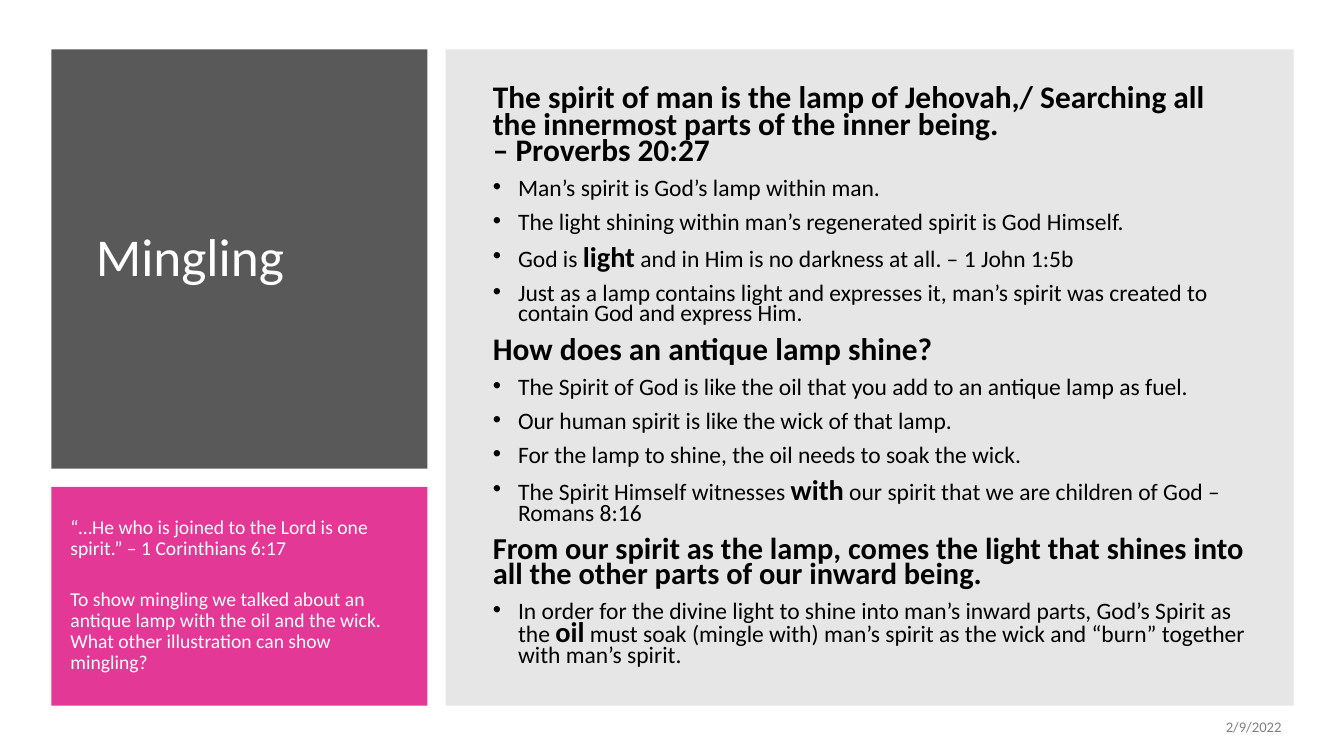
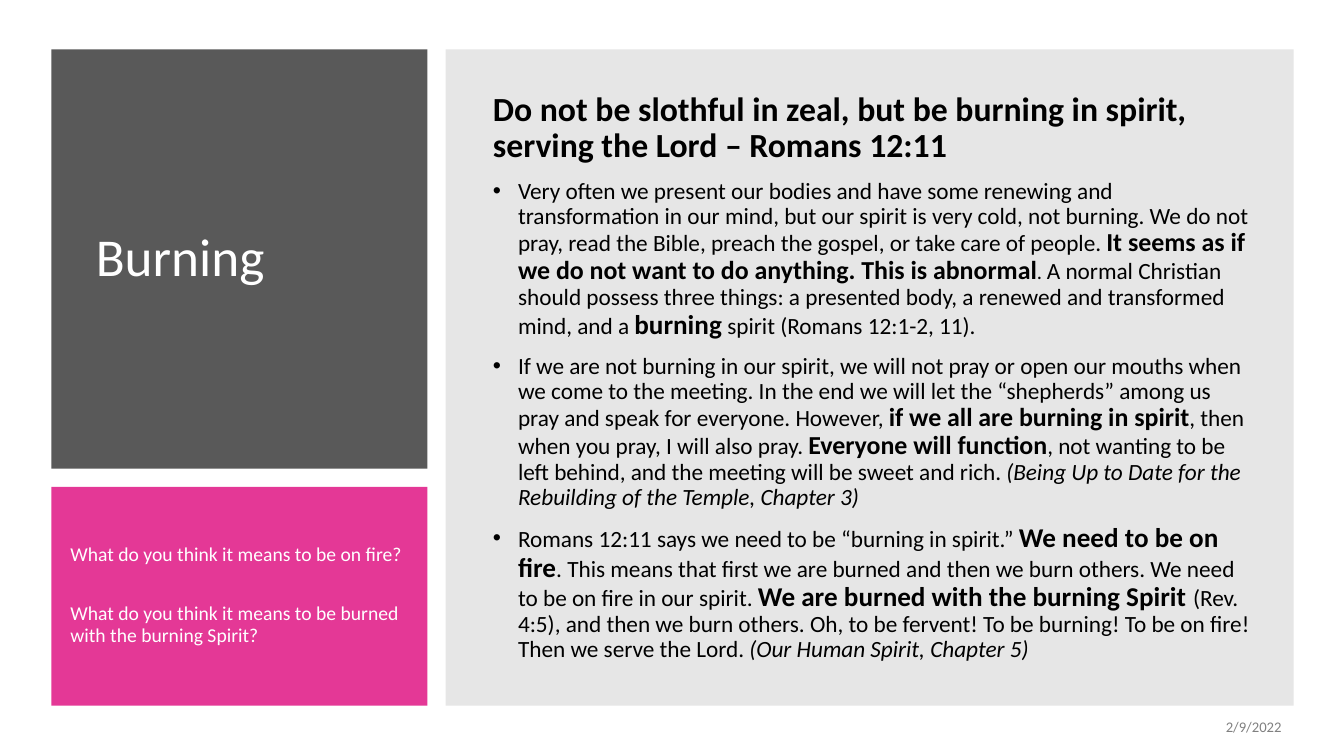
"""Build two lesson slides with a title, a question panel and a verse panel."""
from lxml import etree
from pptx import Presentation
from pptx.dml.color import RGBColor
from pptx.enum.shapes import MSO_SHAPE
from pptx.enum.text import MSO_ANCHOR, MSO_AUTO_SIZE, PP_ALIGN
from pptx.oxml.ns import qn
from pptx.util import Inches, Pt

RECT = MSO_SHAPE.RECTANGLE
MIDDLE = MSO_ANCHOR.MIDDLE
FIXED = MSO_AUTO_SIZE.NONE
LEFT, RIGHT = PP_ALIGN.LEFT, PP_ALIGN.RIGHT

FONT = "Calibri"
DARK = RGBColor(0x59, 0x59, 0x59)
PINK = RGBColor(0xE4, 0x38, 0x96)
PALE = RGBColor(0xE6, 0xE6, 0xE6)
GRAY = RGBColor(0x80, 0x80, 0x80)
WHITE = RGBColor(0xFF, 0xFF, 0xFF)
BLACK = RGBColor(0x00, 0x00, 0x00)

PANELS = [
    (0.51, 0.49, 3.73, 4.16, DARK),
    (0.51, 4.83, 3.73, 2.17, PINK),
    (4.42, 0.49, 8.41, 6.51, PALE),
]

LESSONS = [
    {
        "title": "Mingling",
        "line": 0.7,
        "size": 16.8,
        "gap": 21,
        "notes": [
            "“…He who is joined to the Lord is one spirit.” – 1 Corinthians 6:17",
            "To show mingling we talked about an antique lamp with the oil and the wick. "
            "What other illustration can show mingling?",
        ],
        "body": [
            [("The spirit of man is the lamp of Jehovah,/ Searching all the innermost "
              "parts of the inner being.\n– Proverbs 20:27", 22.4)],
            ["Man’s spirit is God’s lamp within man."],
            ["The light shining within man’s regenerated spirit is God Himself."],
            ["God is ", ("light", 20.3), " and in Him is no darkness at all. – 1 John 1:5b"],
            ["Just as a lamp contains light and expresses it, man’s spirit was created to "
             "contain God and express Him."],
            [("How does an antique lamp shine?", 22.4)],
            ["The Spirit of God is like the oil that you add to an antique lamp as fuel."],
            ["Our human spirit is like the wick of that lamp."],
            ["For the lamp to shine, the oil needs to soak the wick."],
            ["The Spirit Himself witnesses ", ("with", 20.3),
             " our spirit that we are children of God – Romans 8:16"],
            [("From our spirit as the lamp, comes the light that shines into all the "
              "other parts of our inward being.", 21.7)],
            ["In order for the divine light to shine into man’s inward parts, God’s "
             "Spirit as the ", ("oil", 20.3),
             " must soak (mingle with) man’s spirit as the wick and “burn” together "
             "with man’s spirit."],
        ],
    },
    {
        "title": "Burning",
        "line": 0.9,
        "size": 16.6,
        "gap": 27,
        "notes": [
            "What do you think it means to be on fire?",
            "What do you think it means to be burned with the burning Spirit?",
        ],
        "body": [
            [("Do not be slothful in zeal, but be burning in spirit, serving the Lord "
              "– Romans 12:11", 24.1)],
            ["Very often we present our bodies and have some renewing and transformation "
             "in our mind, but our spirit is very cold, not burning. We do not pray, read "
             "the Bible, preach the gospel, or take care of people. ",
             ("It seems as if we do not want to do anything. This is abnormal", 18.5),
             (". ", 14.8, ""),
             "A normal Christian should possess three things: a presented body, a renewed "
             "and transformed mind, and a ", ("burning", 19.4),
             " spirit (Romans 12:1-2, 11)."],
            ["If we are not burning in our spirit, we will not pray or open our mouths "
             "when we come to the meeting. In the end we will let the “shepherds” among us "
             "pray and speak for everyone. However, ",
             ("if we all are burning in spirit", 18.5),
             ", then when you pray, I will also pray. ", ("Everyone will function", 18.5),
             ", not wanting to be left behind, and the meeting will be sweet and rich. ",
             ("(Being Up to Date for the Rebuilding of the Temple, Chapter 3)", 16.6, "i")],
            ["Romans 12:11 says we need to be “burning in spirit.” ",
             ("We need to be on fire", 19.4),
             ". This means that first we are burned and then we burn others. We need to "
             "be on fire in our spirit. ",
             ("We are burned with the burning Spirit ", 19.4),
             "(Rev. 4:5), and then we burn others. Oh, to be fervent! To be burning! To be "
             "on fire! Then we serve the Lord. ",
             ("(Our Human Spirit, Chapter 5)", 16.6, "i")],
        ],
    },
]


def write(shape, paras, box, size, color, line=0.9, before=0, after=0, align=LEFT):
    """Place a shape and fill it; a plain string is a run in the base format."""
    shape.left, shape.top, shape.width, shape.height = map(Inches, box)
    frame = shape.text_frame
    frame.word_wrap = True
    frame.auto_size = FIXED
    frame.vertical_anchor = MIDDLE
    for n, runs in enumerate(paras):
        para = frame.paragraphs[0] if n == 0 else frame.add_paragraph()
        para.alignment = align
        para.line_spacing = line
        para.space_before = Pt(before)
        para.space_after = Pt(after)
        for item in runs:
            text, points, style = (item, size, "") if isinstance(item, str) else (*item, "b")[:3]
            for k, part in enumerate(text.split("\n")):
                if k:
                    para.add_line_break()
                run = para.add_run()
                run.text = part
                font = run.font
                font.name, font.size = FONT, Pt(points)
                font.bold, font.italic = style == "b", style == "i"
                font.color.rgb = color
    return frame


deck = Presentation()
deck.slide_width, deck.slide_height = Inches(13.33), Inches(7.5)

for lesson in LESSONS:
    slide = deck.slides.add_slide(deck.slide_layouts[5])
    shapes = slide.shapes
    title = shapes.title
    for *box, color in PANELS:
        panel = shapes.add_shape(RECT, *map(Inches, box))
        panel.shadow.inherit = False
        panel.fill.solid()
        panel.fill.fore_color.rgb = color
        panel.line.fill.background()
    shapes._spTree.append(title._element)
    write(title, [[lesson["title"]]], (0.85, 0.8, 3.11, 3.54), 38, WHITE)

    body = write(shapes.add_textbox(0, 0, 0, 0), lesson["body"], (4.79, 0.75, 7.7, 5.99),
                 lesson["size"], BLACK, line=lesson["line"], before=10)
    for para, runs in zip(body.paragraphs, lesson["body"]):
        if isinstance(runs[0], str):
            props = para._p.get_or_add_pPr()
            props.set("marL", str(Inches(0.25)))
            props.set("indent", str(Inches(-0.25)))
            etree.SubElement(props, qn("a:buFont"), typeface="Arial")
            etree.SubElement(props, qn("a:buChar"), char="•")

    notes = write(shapes.add_textbox(0, 0, 0, 0), [[note] for note in lesson["notes"]],
                  (0.6, 4.91, 3.56, 2), 14, WHITE, after=6)
    notes.paragraphs[0].space_after = Pt(lesson["gap"])
    write(shapes.add_textbox(0, 0, 0, 0), [["2/9/2022"]], (9.81, 7.01, 3, 0.4), 10.5, GRAY,
          line=1.0, after=6, align=RIGHT)

deck.save("out.pptx")
